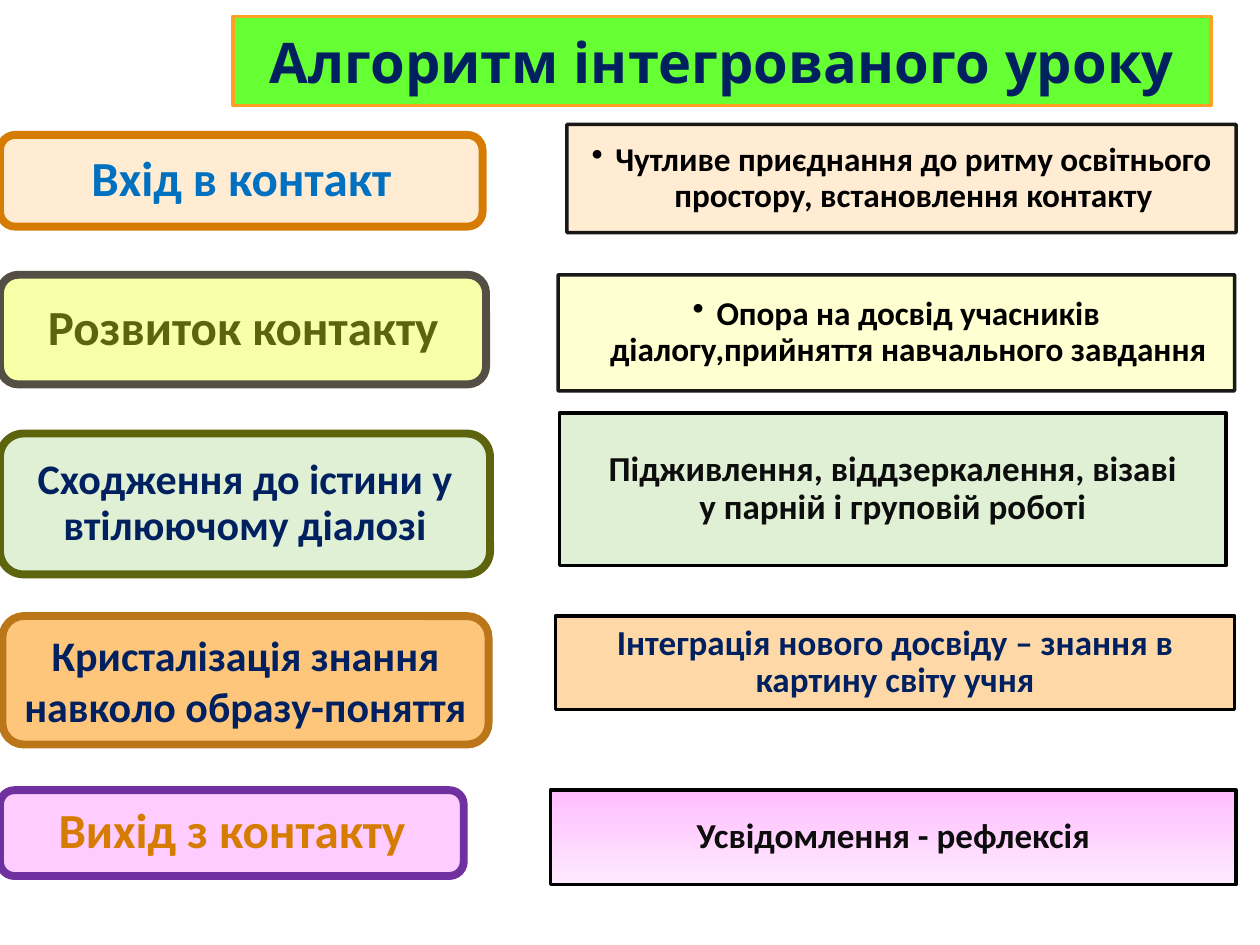
"""Build the slide on the stages of an integrated lesson."""
from lxml.etree import SubElement
from pptx import Presentation
from pptx.dml.color import RGBColor
from pptx.enum.shapes import MSO_SHAPE
from pptx.enum.text import MSO_ANCHOR, PP_ALIGN
from pptx.oxml.ns import qn
from pptx.util import Cm, Pt

BLACK = RGBColor(0x00, 0x00, 0x00)
INK = RGBColor(0x0D, 0x0D, 0x0D)
NAVY = RGBColor(0x00, 0x20, 0x60)
BLUE = RGBColor(0x00, 0x70, 0xC0)
OLIVE = RGBColor(0x5C, 0x65, 0x0D)
ORANGE = RGBColor(0xD6, 0x7C, 0x02)
AMBER = RGBColor(0xFD, 0xA0, 0x23)
BROWN = RGBColor(0xBB, 0x76, 0x1A)
TAUPE = RGBColor(0x55, 0x4E, 0x45)
PURPLE = RGBColor(0x70, 0x30, 0xA0)
LIME = RGBColor(0x66, 0xFF, 0x33)
CREAM = RGBColor(0xFF, 0xEC, 0xD3)
LEMON = RGBColor(0xF9, 0xFF, 0xA7)
PALE_YELLOW = RGBColor(0xFF, 0xFF, 0xCC)
PALE_GREEN = RGBColor(0xDF, 0xF0, 0xD5)
APRICOT = RGBColor(0xFE, 0xC6, 0x7B)
PEACH = RGBColor(0xFE, 0xD9, 0xA7)
PINK = RGBColor(0xFF, 0xCC, 0xFF)
DEEP_PINK = RGBColor(0xFF, 0xBD, 0xFF)
PALE_PINK = RGBColor(0xFF, 0xEA, 0xFF)

WIDE, NORMAL, NARROW = (0.3, 0.15), (0.25, 0.13), (0.2, 0.1)
BULLET_INDENT = Cm(0.48)

TITLE = ("Алгоритм інтегрованого уроку", (4.7, 0.33, 19.71, 1.8), LIME, AMBER, NAVY)
STAGES = [
    ("Вхід в контакт", (0, 2.72, 9.73, 1.85), CREAM, ORANGE, BLUE, 28, WIDE, 0.9),
    ("Розвиток контакту", (0, 5.54, 9.8, 2.21), LEMON, TAUPE, OLIVE, 28, WIDE, 0.9),
    ("Сходження до істини у втілюючому діалозі", (0, 8.74, 9.88, 2.84),
     PALE_GREEN, OLIVE, NAVY, 24, NORMAL, 0.9),
    ("Кристалізація знання навколо образу-поняття", (0.05, 12.42, 9.8, 2.59),
     APRICOT, BROWN, NAVY, 24, NORMAL, 1.0),
    ("Вихід з контакту", (0, 15.93, 9.35, 1.73), PINK, PURPLE, ORANGE, 28, WIDE, 0.9),
]
DETAILS = [
    (["Чутливе приєднання до ритму освітнього простору, встановлення контакту"],
     (11.43, 2.51, 13.49, 2.18), CREAM, BLACK, 19, {"bulleted": True, "clear": ["line"]}),
    (["Опора на досвід учасників діалогу,прийняття навчального завдання"],
     (11.25, 5.54, 13.64, 2.34), PALE_YELLOW, BLACK, 19,
     {"bulleted": True, "clear": ["fill", "line"]}),
    (["Підживлення, віддзеркалення, візаві", "у парній і груповій роботі"],
     (11.28, 8.33, 13.44, 3.07), PALE_GREEN, INK, 20, {}),
    (["Інтеграція нового досвіду – знання в картину світу учня"],
     (11.2, 12.42, 13.69, 1.88), PEACH, NAVY, 20, {}),
    (["Усвідомлення - рефлексія"],
     (11.1, 15.93, 13.82, 1.9), [DEEP_PINK, PALE_PINK], INK, 20, {}),
]


def set_all(target, values):
    for name, value in values.items():
        setattr(target, name, value)


def paint(box, fill, line, line_width, clear):
    if isinstance(fill, list):
        box.fill.gradient()
        box.fill.gradient_angle = 270
        for stop, color in zip(box.fill.gradient_stops, fill):
            stop.color.rgb = color
    else:
        box.fill.solid()
        box.fill.fore_color.rgb = fill
    box.line.color.rgb = line
    box.line.width = Pt(line_width)
    properties = box.element.spPr
    parents = {"fill": properties, "line": properties.find(qn("a:ln"))}
    for part in clear:
        color = parents[part].find(qn("a:solidFill")).find(qn("a:srgbClr"))
        SubElement(color, qn("a:alpha"), val="90000")


def add_bullet(para):
    properties = para._p.get_or_add_pPr()
    properties.set("marL", str(BULLET_INDENT))
    properties.set("indent", str(-BULLET_INDENT))
    SubElement(properties, qn("a:buChar"), char="•")


def add_box(page, kind, texts, place, fill, line, line_width, color, size,
            margins=NORMAL, spacing=1.0, font="Calibri", bulleted=False, clear=()):
    box = page.shapes.add_shape(kind, *map(Cm, place))
    box.shadow.inherit = False
    paint(box, fill, line, line_width, clear)
    side, edge = map(Cm, margins)
    frame = box.text_frame
    set_all(frame, {"word_wrap": True, "vertical_anchor": MSO_ANCHOR.MIDDLE,
                    "margin_left": side, "margin_right": side,
                    "margin_top": edge, "margin_bottom": edge})
    for index, text in enumerate(texts):
        para = frame.add_paragraph() if index else frame.paragraphs[0]
        set_all(para, {"alignment": PP_ALIGN.CENTER, "line_spacing": spacing})
        if bulleted:
            add_bullet(para)
        span = para.add_run()
        span.text = text
        set_all(span.font, {"name": font, "size": Pt(size), "bold": True})
        span.font.color.rgb = color


def main():
    deck = Presentation()
    set_all(deck, {"slide_width": Cm(25.4), "slide_height": Cm(19.05)})
    page = deck.slides.add_slide(deck.slide_layouts[6])
    text, place, fill, line, color = TITLE
    add_box(page, MSO_SHAPE.RECTANGLE, [text], place, fill, line, 2, color, 32,
            font="League Spartan")
    for text, place, fill, line, color, size, margins, spacing in STAGES:
        add_box(page, MSO_SHAPE.ROUNDED_RECTANGLE, [text], place, fill, line, 4.5,
                color, size, margins, spacing)
    for texts, place, fill, color, size, extras in DETAILS:
        add_box(page, MSO_SHAPE.RECTANGLE, texts, place, fill, BLACK, 2,
                color, size, NARROW, 0.9, **extras)
    deck.save("out.pptx")


if __name__ == "__main__":
    main()
